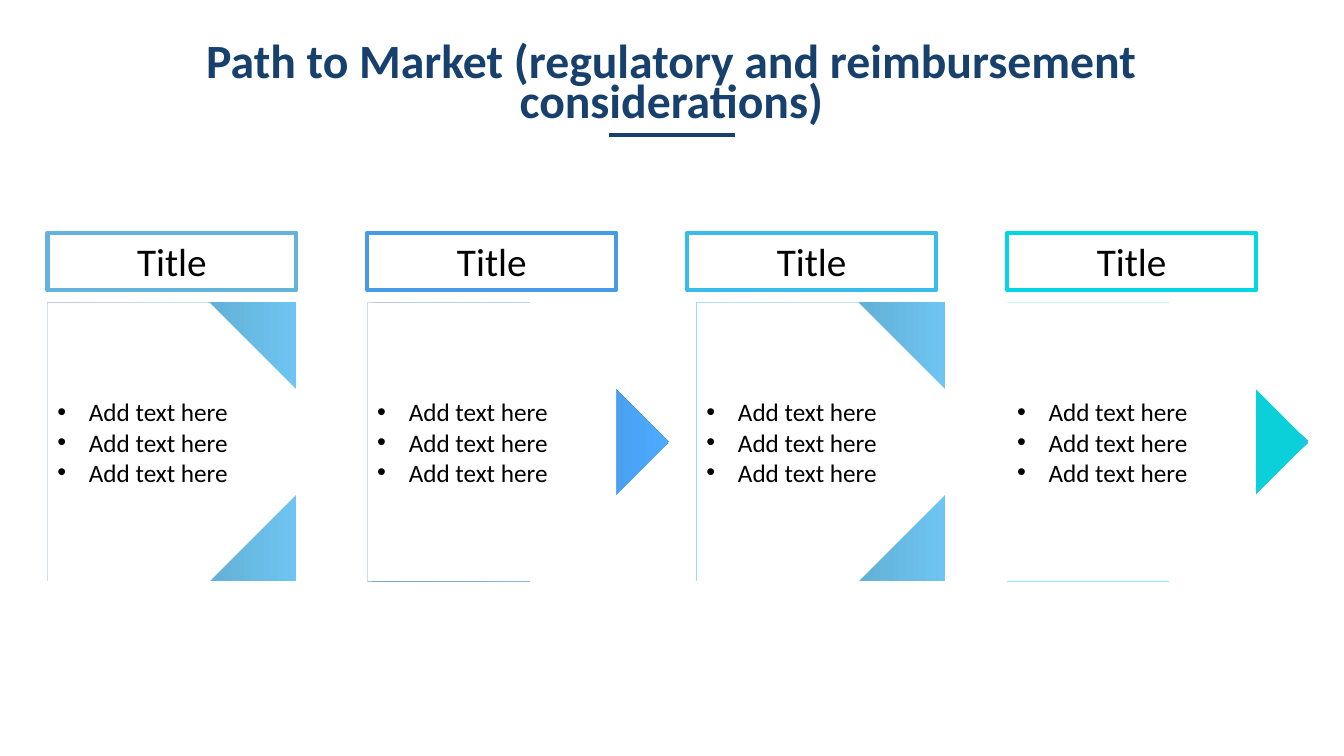
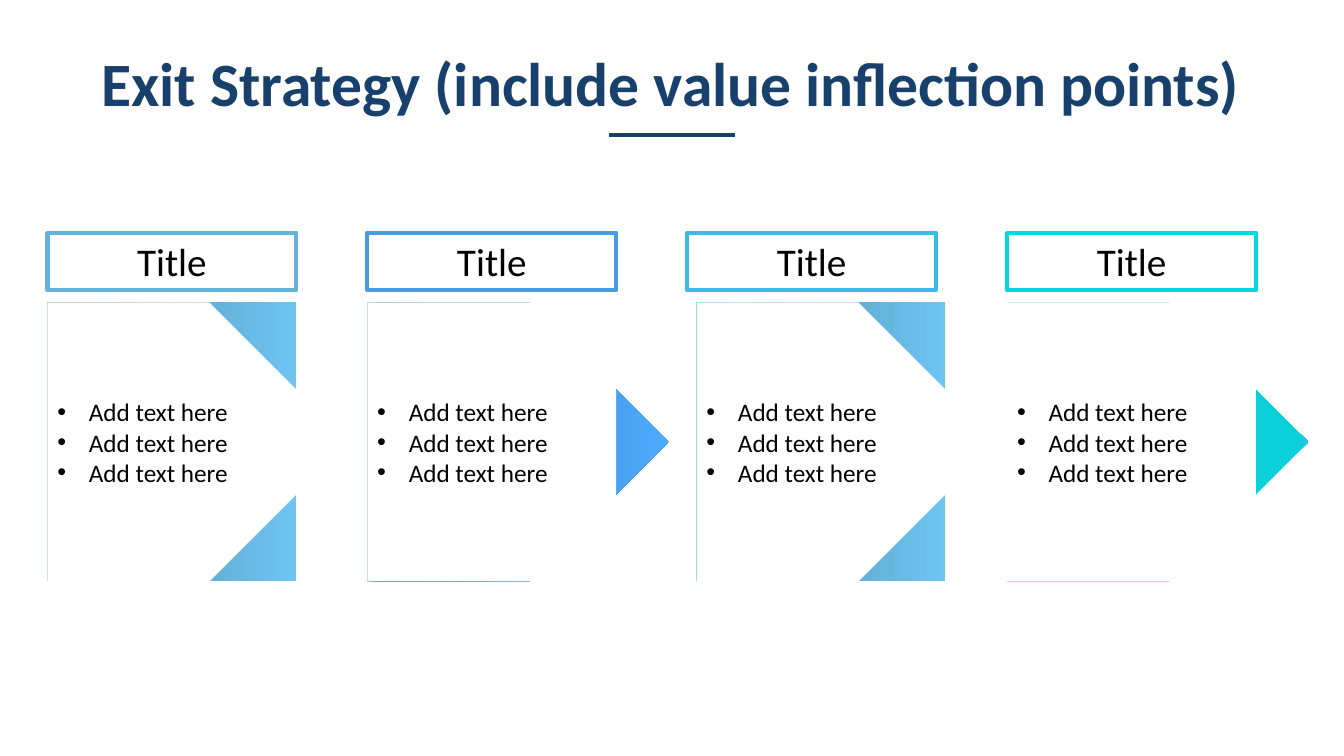
from dataclasses import dataclass

from lxml.etree import SubElement
from pptx import Presentation
from pptx.dml.color import RGBColor
from pptx.enum.shapes import MSO_CONNECTOR as Connector, MSO_SHAPE as Shape
from pptx.enum.text import MSO_ANCHOR as Anchor, MSO_AUTO_SIZE as AutoSize, PP_ALIGN as Align
from pptx.oxml.ns import qn
from pptx.util import Pt


@dataclass(frozen=True)
class Theme:
    font: str = "Calibri"
    navy: str = "17406D"
    white: str = "FFFFFF"
    black: str = "000000"
    header_size: float = 28
    list_size: float = 18
    line_width: float = 3
    bullet_indent: float = 22.5


@dataclass(frozen=True)
class Stage:
    border: str
    gradient: tuple
    arrow_behind: bool
    shift: float = 0


THEME = Theme()

# Layout in points
SLIDE_WIDTH, SLIDE_HEIGHT = 960, 540
TITLE_BOX = (40.3, 36, 878.4, 51.8)
RULE_Y, RULE_WIDTH = 96.5, 90
FIRST_LEFT, STAGE_PITCH = 33.9, 228.5
STAGE_WIDTH, ARROW_WIDTH = 177.8, 215.3
HEADER_TOP, HEADER_HEIGHT = 166.3, 41
PANEL_TOP, PANEL_HEIGHT = 216, 199.4

# Content: gradient stops are (percent, colour)
STAGES = (
    Stage("63B3DB", ((0, "41758F"), (50, "5DA6CB"), (100, "6EC5F1")), False),
    Stage("469AE6", ((0, "2E6596"), (50, "428FD6"), (100, "4EAAFE")), True),
    Stage("3ABCEB", ((0, "00B0F0"), (50, "5DA6CB"), (100, "6EC5F1")), False, 6.6),
    Stage("00D7E3", ((97, "0BD0D9"), (100, "2DBDEC"), (100, "4EAAFE")), True),
)
STAGE_HEADER = "Title"
STAGE_POINTS = ("Add text here",) * 3
# Title, type size, line spacing
SLIDES = (
    ("Path to Market (regulatory and reimbursement considerations)", 34.1, 0.7),
    ("Exit Strategy (include value inflection points)", 44, 0.9),
)


def style_paragraph(paragraph, size, color, align, bold=False):
    paragraph.alignment = align
    for run in paragraph.runs:
        run.font.name = THEME.font
        run.font.size = Pt(size)
        run.font.bold = bold
        run.font.color.rgb = RGBColor.from_string(color)


def add_bullet(paragraph):
    properties = paragraph._p.get_or_add_pPr()
    indent = Pt(THEME.bullet_indent)
    properties.set("marL", str(indent))
    properties.set("indent", str(-indent))
    SubElement(properties, qn("a:buFont"), typeface="Arial")
    SubElement(properties, qn("a:buChar"), char="•")


def fill_gradient(shape, stops):
    shape.fill.gradient()
    shape.fill.gradient_angle = 0
    stop_list = shape._element.spPr.find(".//" + qn("a:gsLst"))
    for old_stop in list(stop_list):
        stop_list.remove(old_stop)
    for percent, color in stops:
        stop = SubElement(stop_list, qn("a:gs"), pos=str(percent * 1000))
        SubElement(stop, qn("a:srgbClr"), val=color)


def add_plain_shape(shapes, kind, left, top, width, height):
    shape = shapes.add_shape(kind, Pt(left), Pt(top), Pt(width), Pt(height))
    shape.shadow.inherit = False
    shape.line.fill.background()
    return shape


def add_title(slide, text, size, spacing):
    title = slide.shapes.title
    title.left, title.top, title.width, title.height = map(Pt, TITLE_BOX)
    frame = title.text_frame
    frame.text = text
    frame.word_wrap = True
    frame.auto_size = AutoSize.NONE
    frame.vertical_anchor = Anchor.MIDDLE
    frame.margin_left = frame.margin_right = frame.margin_top = frame.margin_bottom = 0
    paragraph = frame.paragraphs[0]
    paragraph.line_spacing = spacing
    style_paragraph(paragraph, size, THEME.navy, Align.CENTER, bold=True)


def add_title_rule(slide):
    left = (SLIDE_WIDTH - RULE_WIDTH) / 2
    rule = slide.shapes.add_connector(
        Connector.STRAIGHT, Pt(left), Pt(RULE_Y), Pt(left + RULE_WIDTH), Pt(RULE_Y))
    rule.line.color.rgb = RGBColor.from_string(THEME.navy)
    rule.line.width = Pt(THEME.line_width)
    SubElement(rule._element.spPr, qn("a:effectLst"))


def add_header(slide, left, border):
    header = add_plain_shape(
        slide.shapes, Shape.RECTANGLE, left, HEADER_TOP, STAGE_WIDTH, HEADER_HEIGHT)
    header.fill.background()
    header.line.color.rgb = RGBColor.from_string(border)
    header.line.width = Pt(THEME.line_width)
    frame = header.text_frame
    frame.text = STAGE_HEADER
    frame.word_wrap = True
    frame.auto_size = AutoSize.SHAPE_TO_FIT_TEXT
    frame.vertical_anchor = Anchor.TOP
    style_paragraph(frame.paragraphs[0], THEME.header_size, THEME.black, Align.CENTER)


def add_panel(slide, left, stage):
    """A white list panel over a gradient; one of the two is an arrow."""
    outlines = [(Shape.RECTANGLE, STAGE_WIDTH), (Shape.PENTAGON, ARROW_WIDTH)]
    if stage.arrow_behind:
        outlines.reverse()
    group = slide.shapes.add_group_shape()
    accent, panel = [
        add_plain_shape(group.shapes, kind, left, PANEL_TOP, width, PANEL_HEIGHT)
        for kind, width in outlines
    ]
    fill_gradient(accent, stage.gradient)
    panel.fill.solid()
    panel.fill.fore_color.rgb = RGBColor.from_string(THEME.white)
    frame = panel.text_frame
    frame.word_wrap = True
    frame.vertical_anchor = Anchor.MIDDLE
    frame.text = "\n".join(STAGE_POINTS)
    for paragraph in frame.paragraphs:
        style_paragraph(paragraph, THEME.list_size, THEME.black, Align.LEFT)
        add_bullet(paragraph)


def main():
    deck = Presentation()
    deck.slide_width, deck.slide_height = Pt(SLIDE_WIDTH), Pt(SLIDE_HEIGHT)
    title_only = deck.slide_layouts[5]

    for text, size, spacing in SLIDES:
        slide = deck.slides.add_slide(title_only)
        add_title(slide, text, size, spacing)
        for index, stage in enumerate(STAGES):
            left = FIRST_LEFT + index * STAGE_PITCH
            add_panel(slide, left + stage.shift, stage)
            add_header(slide, left, stage.border)
        add_title_rule(slide)

    deck.save("out.pptx")


if __name__ == "__main__":
    main()
